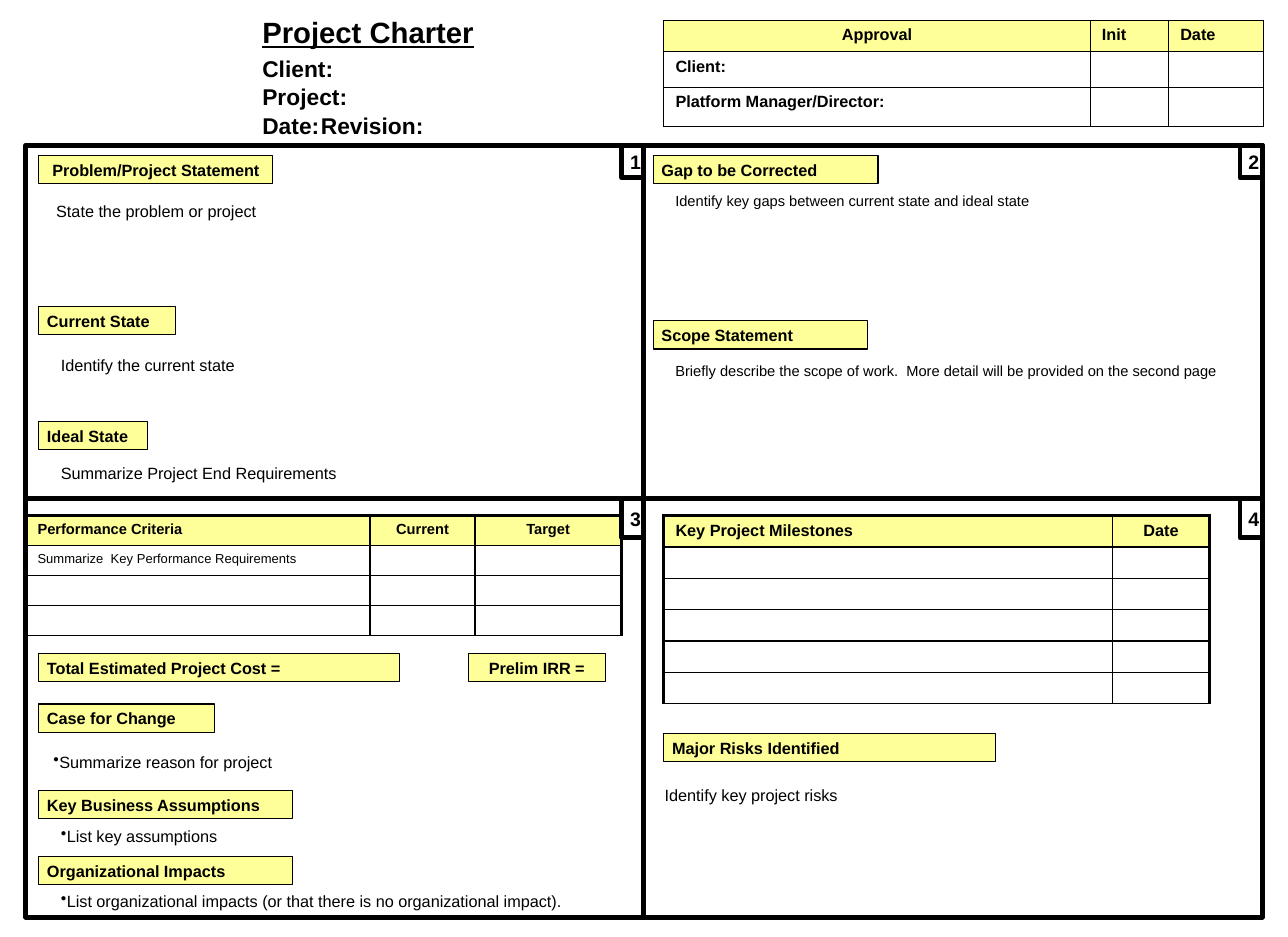
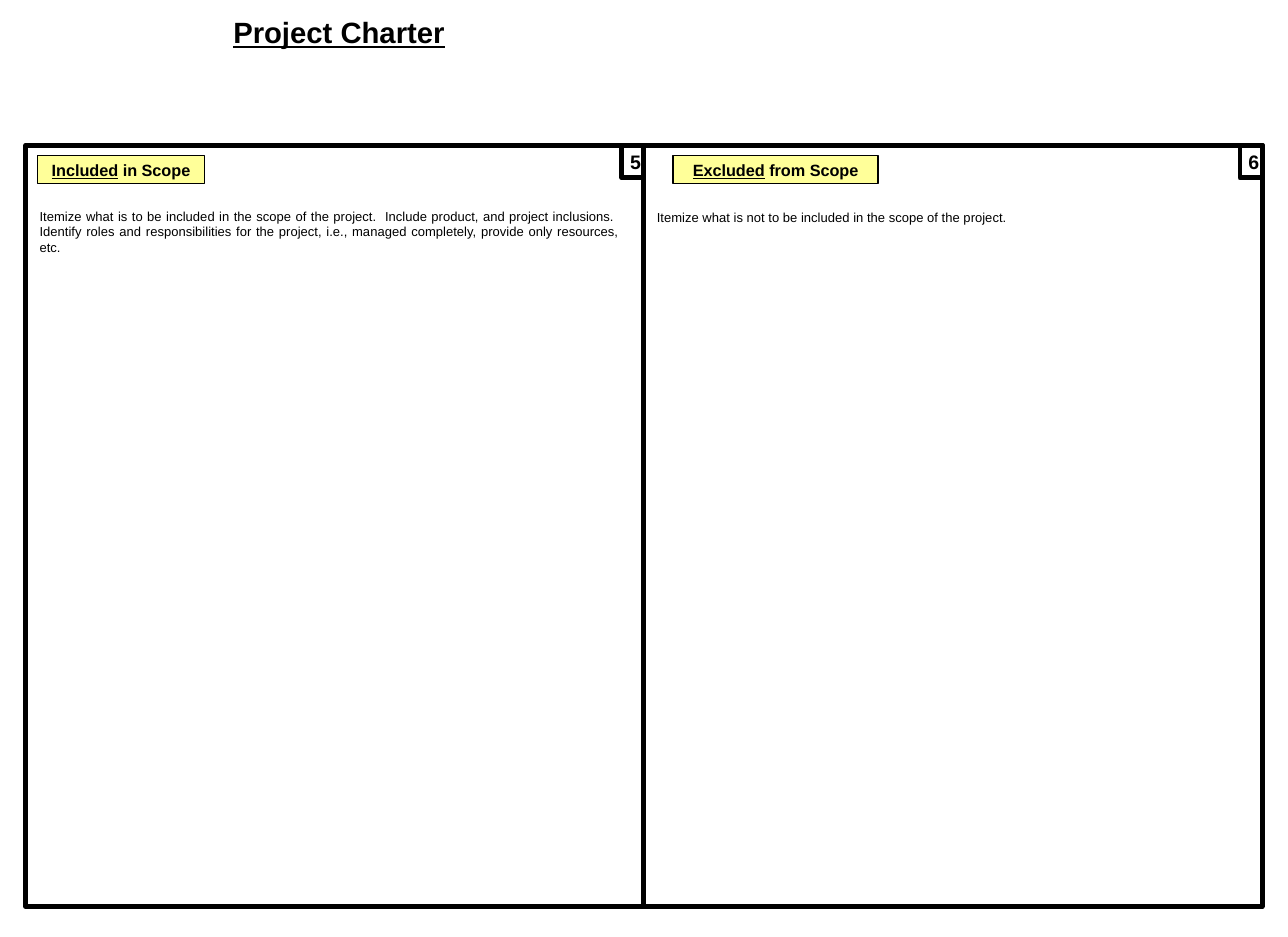
from lxml import etree
from pptx import Presentation
from pptx import util as u
from pptx.dml.color import RGBColor
from pptx.enum import shapes, text
from pptx.oxml.ns import qn

BLACK = RGBColor(0, 0, 0)
WHITE = RGBColor(255, 255, 255)
YELLOW = RGBColor(0xFF, 0xFF, 0x99)
FONT = "Arial"
LEFT, CENTER, JUSTIFY = text.PP_ALIGN.LEFT, text.PP_ALIGN.CENTER, text.PP_ALIGN.JUSTIFY
TOP, MIDDLE = text.MSO_ANCHOR.TOP, text.MSO_ANCHOR.MIDDLE

# Panel grid and label edges, in centimetres
PANEL_X, PANEL_Y, PANEL_W = 0.56, 3.15, 13.41
UPPER_H, LOWER_H, SCOPE_H = 7.67, 9.07, 16.51
LOWER_Y = PANEL_Y + UPPER_H
MIDLINE = PANEL_X + PANEL_W
LABEL_X, LABEL_Y = 0.84, 3.38
RIGHT_X = 14.4
NOTE_X = 1.07


def add_span(para, words, size, bold=False, underline=False):
    span = para.add_run()
    span.text = words
    font = span.font
    font.name, font.size, font.bold = FONT, u.Pt(size), bold
    font.underline = underline
    font.color.rgb = BLACK


def set_frame(box, anchor, side, edge):
    """Fix wrapping, anchor and insets of a text frame and return it."""
    frame = box.text_frame
    frame.word_wrap = True
    frame.auto_size = text.MSO_AUTO_SIZE.NONE
    frame.vertical_anchor = anchor
    frame.margin_left = frame.margin_right = u.Cm(side)
    frame.margin_top = frame.margin_bottom = u.Cm(edge)
    return frame


def place(box, left, top, width, height):
    box.left, box.top = u.Cm(left), u.Cm(top)
    box.width, box.height = u.Cm(width), u.Cm(height)


def add_title(page, left, width):
    title = page.shapes.title
    place(title, left, 0.2, width, 1.27)
    para = set_frame(title, MIDDLE, 0.18, 0.1).paragraphs[0]
    para.alignment = LEFT
    para.line_spacing = 0.5
    add_span(para, "Project Charter", 18, bold=True, underline=True)


def add_fields(page, lines):
    """Fill the body placeholder with the charter's heading fields."""
    body = page.placeholders[1]
    place(body, 5.51, 1.07, 8.66, 2.57)
    frame = set_frame(body, TOP, 0.18, 0.08)
    for index, line in enumerate(lines):
        para = frame.add_paragraph() if index else frame.paragraphs[0]
        props = para._p.get_or_add_pPr()
        props.set("marL", "0")
        props.set("indent", "0")
        para.space_before = u.Pt(0)
        para.line_spacing = 1.05
        etree.SubElement(props, qn("a:buNone"))
        tabs = etree.SubElement(props, qn("a:tabLst"))
        etree.SubElement(tabs, qn("a:tab"), pos=str(u.Cm(3.44)), algn="l")
        add_span(para, line, 14, bold=True)


def add_rect(page, left, top, width, height, line_width, fill=None):
    box = page.shapes.add_shape(shapes.MSO_SHAPE.RECTANGLE, u.Cm(left), u.Cm(top),
                                u.Cm(width), u.Cm(height))
    box.shadow.inherit = False
    if fill is None:
        box.fill.background()
    else:
        box.fill.solid()
        box.fill.fore_color.rgb = fill
    box.line.color.rgb = BLACK
    box.line.width = u.Pt(line_width)
    return box


def add_panel(page, number, left, top, height, tab_height=0.71):
    """Draw a framed panel with its number in the top right corner."""
    add_rect(page, left, top, PANEL_W, height, 3)
    tab_width = 0.48
    tab = add_rect(page, left + PANEL_W - tab_width, top, tab_width, tab_height, 3)
    para = set_frame(tab, MIDDLE, 0.18, 0.08).paragraphs[0]
    para.alignment = LEFT
    add_span(para, number, 12, bold=True)


def add_label(page, words, left, top, width, align=LEFT, underlined=""):
    label = add_rect(page, left, top, width, 0.61, 0.75, YELLOW)
    para = set_frame(label, TOP, 0.18, 0.1).paragraphs[0]
    para.alignment = align
    if underlined:
        add_span(para, underlined, 10, bold=True, underline=True)
    add_span(para, words, 10, bold=True)


def add_note(page, words, left, top, size=10, bullet=False, width=12.9, height=0.69):
    box = page.shapes.add_textbox(u.Cm(left), u.Cm(top), u.Cm(width), u.Cm(height))
    para = set_frame(box, TOP, 0.25, 0.13).paragraphs[0]
    para.alignment = JUSTIFY
    if bullet:
        props = para._p.get_or_add_pPr()
        hang = u.Cm(0.13)
        props.set("marL", str(hang))
        props.set("indent", str(-hang))
        etree.SubElement(props, qn("a:buChar"), char="•")
    add_span(para, words, size)


def set_borders(cell, widths):
    props = cell._tc.get_or_add_tcPr()
    for side, width in zip("LRTB", widths):
        line = etree.SubElement(props, qn(f"a:ln{side}"), w=str(u.Pt(width)))
        fill = etree.SubElement(line, qn("a:solidFill"))
        etree.SubElement(fill, qn("a:srgbClr"), val=str(BLACK))


def add_grid(page, left, top, widths, heights, rows, centered, outer, inner,
             head_size=10, body_size=10, body_bold=False):
    """Add a table; outer is the line width at the left, right and top edges."""
    table = page.shapes.add_table(len(heights), len(widths), u.Cm(left), u.Cm(top),
                                  u.Cm(sum(widths)), u.Cm(sum(heights))).table
    table.first_row = table.horz_banding = False
    for column, width in zip(table.columns, widths):
        column.width = u.Cm(width)
    last = len(widths) - 1
    for r, height in enumerate(heights):
        table.rows[r].height = u.Cm(height)
        head = r == 0
        for c in range(len(widths)):
            cell = table.cell(r, c)
            set_borders(cell, (inner if c else outer, outer if c == last else inner,
                               outer if head else inner, inner))
            cell.fill.solid()
            cell.fill.fore_color.rgb = YELLOW if head else WHITE
            para = cell.text_frame.paragraphs[0]
            words = rows[r][c] if r < len(rows) and c < len(rows[r]) else ""
            if words:
                para.alignment = CENTER if head and c in centered else LEFT
                add_span(para, words, head_size if head else body_size, head or body_bold)
            else:
                etree.SubElement(para._p, qn("a:endParaRPr"), sz="800")


def build_charter(deck):
    page = deck.slides.add_slide(deck.slide_layouts[1])
    add_title(page, 5.51, 8.89)
    add_fields(page, ["Client:", "Project:", "Date:\tRevision:"])
    add_grid(page, RIGHT_X, 0.44, [9.25, 1.7, 2.06], [0.68, 0.77, 0.85],
             [["Approval", "Init", "Date"], ["Client:"], ["Platform Manager/Director:"]],
             centered={0}, outer=0.75, inner=0.75, body_bold=True)
    add_grid(page, PANEL_X, 11.18, [7.47, 2.27, 3.18], [0.65] * 4,
             [["Performance Criteria", "Current", "Target"],
              ["Summarize  Key Performance Requirements"]],
             centered={1, 2}, outer=2.25, inner=1, head_size=9, body_size=8)
    add_grid(page, RIGHT_X, 11.18, [9.73, 2.11], [0.68] * 6,
             [["Key Project Milestones", "Date"]], centered={1}, outer=2.25, inner=1)

    add_panel(page, "1", PANEL_X, PANEL_Y, UPPER_H)
    add_panel(page, "2", MIDLINE, PANEL_Y, UPPER_H)
    add_panel(page, "3", PANEL_X, LOWER_Y, LOWER_H, 0.84)
    add_panel(page, "4", MIDLINE, LOWER_Y, LOWER_H, 0.84)

    add_label(page, "Problem/Project Statement", LABEL_X, LABEL_Y, 5.08, CENTER)
    add_label(page, "Prelim IRR =", 10.16, 14.17, 2.97, CENTER)
    for words, left, top, width in [
        ("Current State", LABEL_X, 6.65, 2.97),
        ("Ideal State", LABEL_X, 9.14, 2.36),
        ("Gap to be Corrected", 14.17, LABEL_Y, 4.88),
        ("Scope Statement", 14.17, 6.96, 4.65),
        ("Total Estimated Project Cost =", LABEL_X, 14.17, 7.82),
        ("Case for Change", LABEL_X, 15.27, 3.81),
        ("Key Business Assumptions", LABEL_X, 17.15, 5.51),
        ("Organizational Impacts", LABEL_X, 18.57, 5.51),
        ("Major Risks Identified", RIGHT_X, 15.9, 7.19),
    ]:
        add_label(page, words, left, top, width)

    for words, left, top, size, bullet in [
        ("State the problem or project", 0.97, 4.24, 10, False),
        ("Identify the current state", NOTE_X, 7.57, 10, False),
        ("Summarize Project End Requirements", NOTE_X, 9.91, 10, False),
        ("Identify key gaps between current state and ideal state", RIGHT_X, 4.04, 9, False),
        ("Briefly describe the scope of work.  More detail will be provided "
         "on the second page", RIGHT_X, 7.72, 9, False),
        ("Summarize reason for project", 0.91, 16.18, 10, True),
        ("List key assumptions", NOTE_X, 17.78, 10, True),
        ("List organizational impacts (or that there is no organizational impact).",
         NOTE_X, 19.2, 10, True),
        ("Identify key project risks", 14.17, 16.89, 10, False),
    ]:
        add_note(page, words, left, top, size, bullet)


def build_scope(deck):
    page = deck.slides.add_slide(deck.slide_layouts[5])
    add_title(page, 4.88, 12.9)
    add_panel(page, "5", PANEL_X, PANEL_Y, SCOPE_H)
    add_panel(page, "6", MIDLINE, PANEL_Y, SCOPE_H)
    add_label(page, " in Scope", 0.81, LABEL_Y, 3.63, CENTER, "Included")
    add_label(page, " from Scope", 14.6, LABEL_Y, 4.45, CENTER, "Excluded")
    add_note(page, "Itemize what is to be included in the scope of the project.  Include "
             "product, and project inclusions.  Identify roles and responsibilities for the "
             "project, i.e., managed completely, provide only resources, etc.",
             0.61, 4.39, 8, width=13.08, height=1.27)
    add_note(page, "Itemize what is not to be included in the scope of the project.",
             14.0, 4.42, 8, width=13.08)


def main():
    deck = Presentation()
    deck.slide_width, deck.slide_height = u.Cm(27.94), u.Cm(20.32)
    build_charter(deck)
    build_scope(deck)
    deck.save("out.pptx")


if __name__ == "__main__":
    main()
